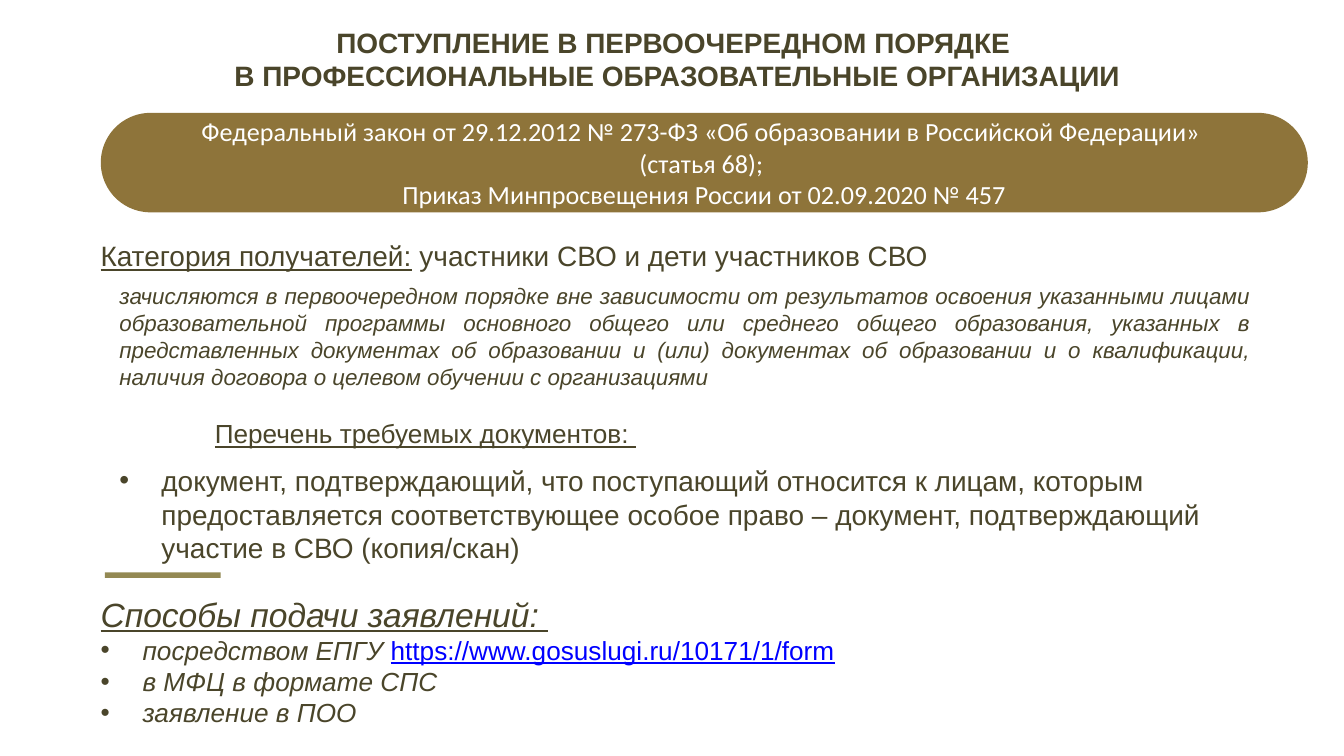
from dataclasses import dataclass

import pptx
import pptx.dml.color
import pptx.enum.shapes
import pptx.enum.text
import pptx.oxml
import pptx.oxml.ns
import pptx.util

Pt = pptx.util.Pt
Align = pptx.enum.text.PP_ALIGN
Anchor = pptx.enum.text.MSO_ANCHOR
AutoSize = pptx.enum.text.MSO_AUTO_SIZE
Preset = pptx.enum.shapes.MSO_SHAPE

OLIVE = "4A452A"
GOLD = "8E743A"
KHAKI = "938953"
LINK = "0000FF"
WHITE = "FFFFFF"
HANGING = 22.5


@dataclass(frozen=True)
class Span:
    text: str
    color: str | None = None
    italic: bool | None = None
    underline: bool | None = None


@dataclass(frozen=True)
class Paragraph:
    spans: tuple[Span, ...]
    size: float
    align: Align = Align.LEFT
    bold: bool = False
    italic: bool = False
    underline: bool = False
    bullet: bool = False
    first_line: float = 0
    color: str = OLIVE
    font: str = "Arial"


@dataclass(frozen=True)
class TextBlock:
    left: float
    top: float
    width: float
    height: float
    paragraphs: tuple[Paragraph, ...]


def plain(text: str, size: float, **style) -> Paragraph:
    return Paragraph((Span(text),), size, **style)


def rgb(value: str) -> pptx.dml.color.RGBColor:
    return pptx.dml.color.RGBColor.from_string(value)


def set_indent(para, margin: float, first_line: float, bullet: bool) -> None:
    properties = para._p.get_or_add_pPr()
    properties.set("marL", str(Pt(margin)))
    properties.set("indent", str(Pt(first_line)))
    if bullet:
        namespace = pptx.oxml.ns.nsdecls("a")
        for tag in ('buFont typeface="Arial"', 'buChar char="•"'):
            name, attribute = tag.split(" ", 1)
            properties.append(pptx.oxml.parse_xml(f"<a:{name} {namespace} {attribute}/>"))


def write_paragraphs(frame, paragraphs: tuple[Paragraph, ...]) -> None:
    for index, item in enumerate(paragraphs):
        para = frame.add_paragraph() if index else frame.paragraphs[0]
        para.alignment = item.align
        if item.bullet:
            set_indent(para, HANGING, -HANGING, True)
        elif item.first_line:
            set_indent(para, 0, item.first_line, False)
        para.font.name = item.font
        para.font.size = Pt(item.size)
        para.font.bold = item.bold
        para.font.italic = item.italic
        para.font.underline = item.underline
        para.font.color.rgb = rgb(item.color)
        for part in item.spans:
            span = para.add_run()
            span.text = part.text
            span.font.italic = part.italic
            span.font.underline = part.underline
            if part.color:
                span.font.color.rgb = rgb(part.color)


def add_text_block(page, block: TextBlock) -> None:
    box = page.shapes.add_textbox(Pt(block.left), Pt(block.top), Pt(block.width), Pt(block.height))
    box.text_frame.word_wrap = True
    box.text_frame.auto_size = AutoSize.SHAPE_TO_FIT_TEXT
    write_paragraphs(box.text_frame, block.paragraphs)


def add_panel(page, preset: Preset, left: float, top: float, width: float, height: float, fill: str):
    panel = page.shapes.add_shape(preset, Pt(left), Pt(top), Pt(width), Pt(height))
    panel.shadow.inherit = False
    panel.fill.solid()
    panel.fill.fore_color.rgb = rgb(fill)
    panel.line.fill.background()
    return panel


TITLE = tuple(
    plain(text, 15, align=Align.CENTER, bold=True)
    for text in (
        "ПОСТУПЛЕНИЕ В ПЕРВООЧЕРЕДНОМ ПОРЯДКЕ ",
        "В ПРОФЕССИОНАЛЬНЫЕ ОБРАЗОВАТЕЛЬНЫЕ ОРГАНИЗАЦИИ",
    )
)
LAWS = tuple(
    plain(text, 14, align=Align.CENTER, color=WHITE, font="Calibri")
    for text in (
        "Федеральный закон от 29.12.2012 № 273-ФЗ «Об образовании в Российской Федерации» ",
        "(статья 68); ",
        "Приказ Минпросвещения России от 02.09.2020 № 457",
    )
)
RECIPIENTS = Paragraph(
    (Span("Категория получателей:", underline=True), Span(" участники СВО и дети участников СВО")), 15
)
ADMISSION = plain(
    "зачисляются в первоочередном порядке вне зависимости от результатов освоения указанными лицами "
    "образовательной программы основного общего или среднего общего образования, указанных в "
    "представленных документах об образовании и (или) документах об образовании и о квалификации, "
    "наличия договора о целевом обучении с организациями",
    12, align=Align.JUSTIFY, italic=True,
)
SUBMISSION = (
    plain("Способы подачи заявлений: ", 18, italic=True, underline=True),
    Paragraph(
        (
            Span("посредством ЕПГУ ", italic=True),
            Span("https://www.gosuslugi.ru/10171/1/form", LINK, False, True),
        ),
        14, bullet=True,
    ),
    plain("в МФЦ в формате СПС", 14, italic=True, bullet=True),
    plain("заявление в ПОО", 14, italic=True, bullet=True),
)
DOCUMENTS_HEADING = plain("Перечень требуемых документов: ", 14, underline=True, first_line=21.6)
DOCUMENT = plain(
    "документ, подтверждающий, что поступающий относится к лицам, которым предоставляется "
    "соответствующее особое право – документ, подтверждающий участие в СВО (копия/скан)",
    15, bullet=True,
)

BLOCKS = (
    TextBlock(56.9, 10, 612, 44, TITLE),
    TextBlock(46.8, 124.5, 637, 25, (RECIPIENTS,)),
    TextBlock(56.9, 147.6, 620.6, 65.5, (ADMISSION,)),
    TextBlock(46.8, 314.6, 646.6, 80, SUBMISSION),
    TextBlock(86.4, 220.3, 329, 24.5, (DOCUMENTS_HEADING,)),
    TextBlock(56.9, 244.8, 635, 62, (DOCUMENT,)),
)


def main() -> None:
    deck = pptx.Presentation()
    deck.slide_width, deck.slide_height = Pt(720), Pt(405)
    page = deck.slides.add_slide(deck.slide_layouts[6])

    add_panel(page, Preset.RECTANGLE, 56.2, 306.7, 62, 2.9, KHAKI)
    banner = add_panel(page, Preset.ROUNDED_RECTANGLE, 54, 60.5, 646.6, 53.3, GOLD)
    banner.adjustments[0] = 0.5
    banner.text_frame.word_wrap = True
    banner.text_frame.vertical_anchor = Anchor.MIDDLE
    write_paragraphs(banner.text_frame, LAWS)

    for block in BLOCKS:
        add_text_block(page, block)
    deck.save("out.pptx")


if __name__ == "__main__":
    main()
